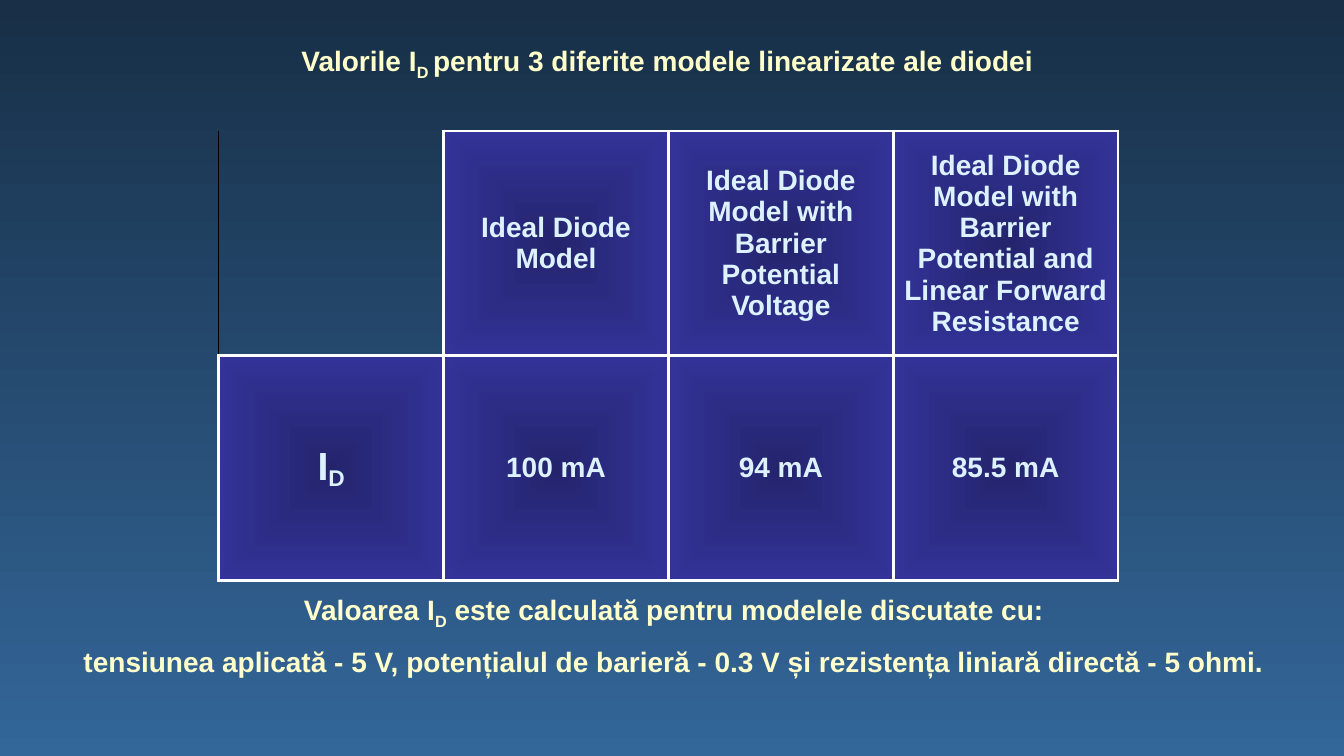
from lxml.etree import SubElement
from pptx import Presentation
from pptx.dml.color import RGBColor
from pptx.enum.text import MSO_ANCHOR, MSO_AUTO_SIZE, PP_ALIGN
from pptx.oxml.ns import qn
from pptx.util import Inches, Pt


def color(value):
    return RGBColor.from_string(value)


class SlideBuilder:
    font = "Arial"
    caption_color = "FFFFCC"
    cell_color = "DDF2FF"
    cell_gradient = ("24246D", "333399")
    white_border = ("FFFFFF", 2.25)
    cell_margin = Inches(0.05)

    def __init__(self, slide):
        self.slide = slide

    def gradient(self, fill, colors):
        fill.gradient()
        for stop, position, value in zip(fill.gradient_stops, (0, 1), colors):
            stop.position = position
            stop.color.rgb = color(value)

    def background(self, top, bottom):
        fill = self.slide.background.fill
        self.gradient(fill, (top, bottom))
        fill.gradient_angle = 270

    def fill_paragraph(self, paragraph, parts, text_color, space_percent, size=20):
        paragraph.alignment = PP_ALIGN.CENTER
        spacing = SubElement(paragraph._p.get_or_add_pPr(), qn("a:spcBef"))
        SubElement(spacing, qn("a:spcPct"), val=str(space_percent * 1000))
        for text, baseline in parts:
            run = paragraph.add_run()
            run.text = text
            run.font.name = self.font
            run.font.size = Pt(size)
            run.font.bold = True
            run.font.color.rgb = color(text_color)
            if baseline:
                run._r.get_or_add_rPr().set("baseline", str(baseline * 1000))

    def caption(self, left, top, width, height, lines):
        box = self.slide.shapes.add_textbox(
            Inches(left), Inches(top), Inches(width), Inches(height))
        frame = box.text_frame
        frame.word_wrap = True
        frame.auto_size = MSO_AUTO_SIZE.SHAPE_TO_FIT_TEXT
        for index, parts in enumerate(lines):
            paragraph = frame.add_paragraph() if index else frame.paragraphs[0]
            self.fill_paragraph(paragraph, parts, self.caption_color, 50)

    def borders(self, cell, left, right, top, bottom):
        properties = cell._tc.get_or_add_tcPr()
        sides = {"lnL": left, "lnR": right, "lnT": top, "lnB": bottom}
        for tag, style in sides.items():
            line = SubElement(properties, qn(f"a:{tag}"))
            if style is None:
                SubElement(line, qn("a:noFill"))
                continue
            value, width = style
            line.set("w", str(Pt(width)))
            fill = SubElement(line, qn("a:solidFill"))
            SubElement(fill, qn("a:srgbClr"), val=value)

    def model_cell(self, cell, parts, size):
        self.borders(cell, *[self.white_border] * 4)
        self.gradient(cell.fill, self.cell_gradient)
        gradient = cell._tc.tcPr.find(qn("a:gradFill"))
        gradient.remove(gradient.find(qn("a:lin")))
        shape = SubElement(gradient, qn("a:path"), path="shape")
        SubElement(shape, qn("a:fillToRect"), l="50000", t="50000", r="50000", b="50000")
        cell.vertical_anchor = MSO_ANCHOR.MIDDLE
        cell.margin_left = cell.margin_right = self.cell_margin
        cell.margin_top = cell.margin_bottom = self.cell_margin
        self.fill_paragraph(cell.text_frame.paragraphs[0], parts, self.cell_color, 20, size)

    def empty_cell(self, cell):
        self.borders(cell, ("000000", 1), self.white_border, None, self.white_border)
        cell.fill.background()

    def table(self, left, top, side, rows):
        columns = len(rows[0])
        table = self.slide.shapes.add_table(
            len(rows), columns, Inches(left), Inches(top),
            Inches(side * columns), Inches(side * len(rows))).table
        table.first_row = False
        table.horz_banding = False
        for row_index, row in enumerate(rows):
            for column_index, parts in enumerate(row):
                cell = table.cell(row_index, column_index)
                if parts:
                    self.model_cell(cell, parts, 28 if column_index == 0 else 20)
                else:
                    self.empty_cell(cell)


def main():
    presentation = Presentation()
    presentation.slide_width = Inches(13.33)
    presentation.slide_height = Inches(7.5)
    builder = SlideBuilder(presentation.slides.add_slide(presentation.slide_layouts[6]))
    builder.background("182F47", "336699")
    builder.caption(2.62, 0.38, 8, 0.44, [
        [("Valorile I", 0), ("D ", -25),
         ("pentru 3 diferite modele linearizate ale diodei", 0)],
    ])
    models = [
        ("Ideal Diode Model", "100 mA"),
        ("Ideal Diode Model with Barrier Potential Voltage", "94 mA"),
        ("Ideal Diode Model with Barrier Potential and Linear Forward Resistance", "85.5 mA"),
    ]
    builder.table(2.17, 1.3, 2.23, [
        [None] + [[(name, 0)] for name, current in models],
        [[("I", 0), ("D", -16)]] + [[(current, 0)] for name, current in models],
    ])
    builder.caption(0.34, 5.83, 12.69, 0.94, [
        [("Valoarea I", 0), ("D", -25),
         (" este calculată pentru modelele discutate cu:", 0)],
        [("tensiunea aplicată - 5 V, potențialul de barieră - 0.3 V "
          "și rezistența liniară directă - 5 ohmi.", 0)],
    ])
    presentation.save("out.pptx")


if __name__ == "__main__":
    main()
